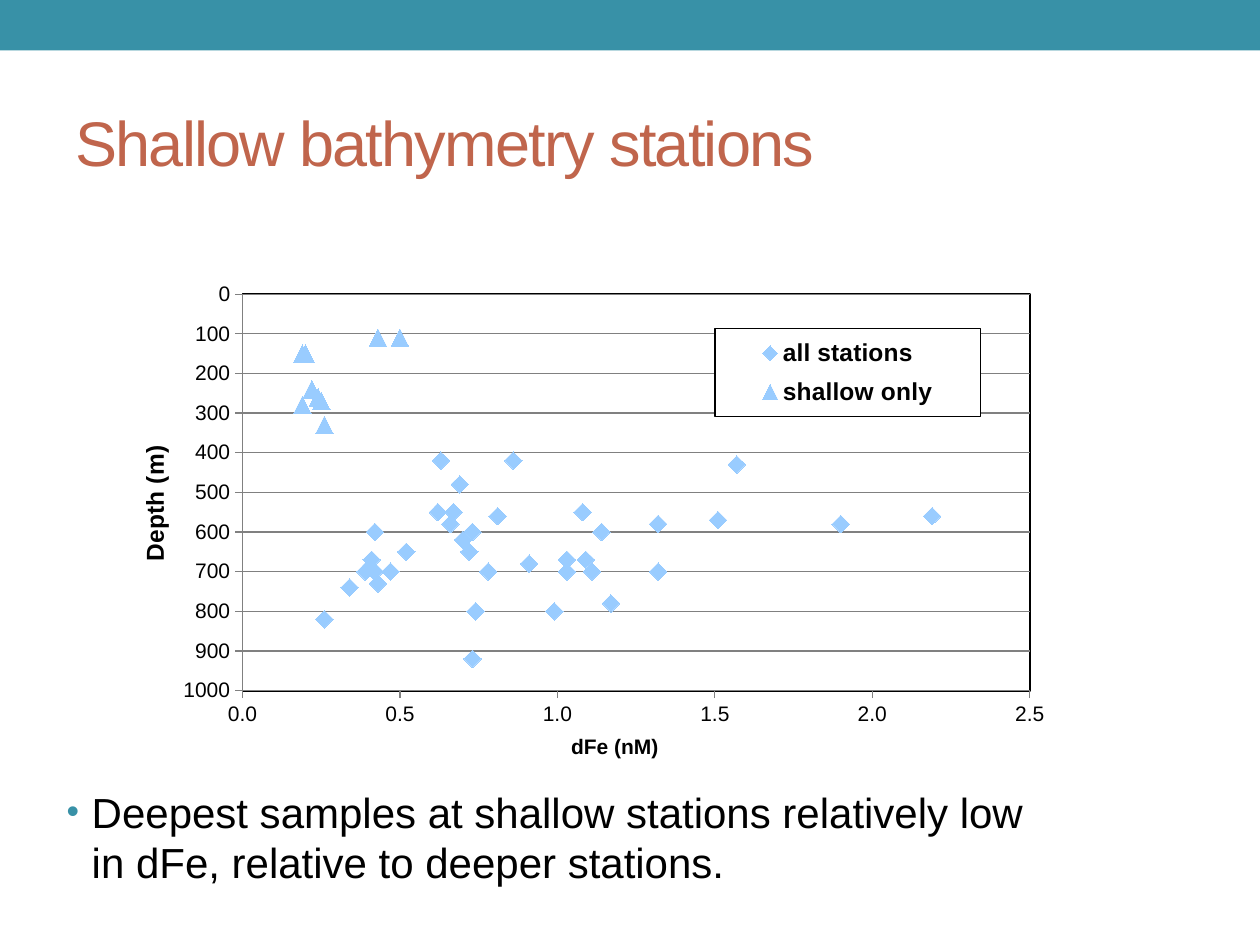
"""Build a slide with a scatter chart of dissolved iron against depth."""
from lxml import etree
from pptx import Presentation
from pptx.chart.data import XyChartData
from pptx.dml.color import RGBColor
from pptx.enum.chart import (XL_AXIS_CROSSES, XL_CHART_TYPE, XL_LEGEND_POSITION,
                             XL_MARKER_STYLE, XL_TICK_MARK)
from pptx.enum.shapes import MSO_SHAPE
from pptx.enum.text import MSO_ANCHOR
from pptx.oxml.ns import qn
from pptx.util import Inches, Pt

SCATTER = XL_CHART_TYPE.XY_SCATTER
DIAMOND, TRIANGLE = XL_MARKER_STYLE.DIAMOND, XL_MARKER_STYLE.TRIANGLE
OUTSIDE, NO_TICK = XL_TICK_MARK.OUTSIDE, XL_TICK_MARK.NONE
AT_MAXIMUM = XL_AXIS_CROSSES.MAXIMUM
LEGEND_RIGHT = XL_LEGEND_POSITION.RIGHT
RECTANGLE = MSO_SHAPE.RECTANGLE
MIDDLE = MSO_ANCHOR.MIDDLE

TEAL = RGBColor(0x38, 0x91, 0xA7)
RUST = RGBColor(0xC0, 0x65, 0x4C)
SKY = RGBColor(0x99, 0xCC, 0xFF)
GREY = RGBColor(0x80, 0x80, 0x80)
BLACK = RGBColor(0, 0, 0)
WHITE = RGBColor(0xFF, 0xFF, 0xFF)
FONT = "Arial"

TITLE = "Shallow bathymetry stations"
MESSAGE = ("Deepest samples at shallow stations relatively low in dFe, "
           "relative to deeper stations.")
SERIES = [
    ("all stations", DIAMOND, [
        (0.62, 550), (0.69, 480), (1.08, 550), (0.39, 700), (1.09, 670), (0.86, 420),
        (1.11, 700), (0.47, 700), (0.52, 650), (1.51, 570), (1.14, 600), (0.73, 600),
        (0.63, 420), (1.03, 700), (0.42, 700), (0.91, 680), (0.72, 650), (0.66, 580),
        (0.42, 600), (0.41, 670), (0.7, 620), (0.43, 730), (0.78, 700), (0.34, 740),
        (0.67, 550), (0.81, 560), (1.57, 430), (1.03, 670), (1.17, 780), (0.74, 800),
        (1.9, 580), (0.73, 920), (0.26, 820), (0.99, 800), (1.32, 700), (1.32, 580),
        (2.19, 560)]),
    ("shallow only", TRIANGLE, [
        (0.19, 150), (0.19, 280), (0.19, 280), (0.2, 150), (0.22, 240), (0.26, 330),
        (0.25, 270), (0.24, 260), (0.5, 110), (0.43, 110)]),
]
AXES = {
    "x": dict(title="dFe (nM)", size=12, maximum=2.5, step=0.5, form="0.0", place=(0.46, 0.93)),
    "y": dict(title="Depth (m)", size=14, maximum=1000, step=100, form="0", place=(0.02, 0.34)),
}
PLOT_PLACE = (0.13, 0.04, 0.8, 0.81)
LEGEND_PLACE = (0.61, 0.11, 0.27, 0.18)


def set_font(font, size, color, bold=False):
    font.name, font.size, font.bold = FONT, Pt(size), bold
    font.color.rgb = color


def add_text(page, area, text, size, color):
    box = page.shapes.add_textbox(*map(Inches, area))
    box.text_frame.word_wrap = True
    para = box.text_frame.paragraphs[0]
    para.text = text
    set_font(para.runs[0].font, size, color)
    return box.text_frame, para


def add_bullet(para, indent):
    props = para._p.get_or_add_pPr()
    props.set("marL", str(indent))
    props.set("indent", str(-indent))
    color = etree.SubElement(props, qn("a:buClr"))
    etree.SubElement(color, qn("a:srgbClr"), val=str(TEAL))
    etree.SubElement(props, qn("a:buSzPct"), val="85000")
    etree.SubElement(props, qn("a:buFont"), typeface=FONT)
    etree.SubElement(props, qn("a:buChar"), char="•")


def set_layout(element, place, inner=False):
    layout = element.find(qn("c:layout"))
    if layout is None:
        layout = etree.Element(qn("c:layout"))
        leading = [child for child in element if child.tag in (qn("c:tx"), qn("c:legendPos"))]
        element.insert(len(leading), layout)
    manual = etree.SubElement(layout, qn("c:manualLayout"))
    if inner:
        etree.SubElement(manual, qn("c:layoutTarget"), val="inner")
    for name in ("xMode", "yMode"):
        etree.SubElement(manual, qn(f"c:{name}"), val="edge")
    for name, share in zip("xywh", place):
        etree.SubElement(manual, qn(f"c:{name}"), val=str(share))


def outline(element, color, fill=None):
    props = etree.Element(qn("c:spPr"))
    if fill is None:
        etree.SubElement(props, qn("a:noFill"))
    else:
        solid = etree.SubElement(props, qn("a:solidFill"))
        etree.SubElement(solid, qn("a:srgbClr"), val=str(fill))
    line = etree.SubElement(props, qn("a:ln"), w=str(Pt(1)))
    solid = etree.SubElement(line, qn("a:solidFill"))
    etree.SubElement(solid, qn("a:srgbClr"), val=str(color))
    text = element.find(qn("c:txPr"))
    if text is None:
        element.append(props)
    else:
        text.addprevious(props)


def style_axis(axis, title, size, maximum, step, form, place):
    axis.minimum_scale, axis.maximum_scale, axis.major_unit = 0, maximum, step
    axis.major_tick_mark, axis.minor_tick_mark = OUTSIDE, NO_TICK
    axis.tick_labels.number_format = form
    axis.tick_labels.number_format_is_linked = False
    set_font(axis.tick_labels.font, 12, BLACK)
    axis.format.line.color.rgb = GREY
    axis.has_title = True
    para = axis.axis_title.text_frame.paragraphs[0]
    para.text = title
    set_font(para.runs[0].font, size, BLACK, True)
    set_layout(axis.axis_title._element, place)


def add_scatter(page, area):
    data = XyChartData()
    for name, _, points in SERIES:
        series = data.add_series(name)
        for iron, depth in points:
            series.add_data_point(iron, depth)
    chart = page.shapes.add_chart(SCATTER, *map(Inches, area), data).chart
    set_font(chart.font, 10, BLACK)
    chart.has_title = False
    chart.plots[0].vary_by_categories = False

    style_axis(chart.category_axis, **AXES["x"])
    style_axis(chart.value_axis, **AXES["y"])
    chart.category_axis.has_major_gridlines = False
    chart.value_axis.has_major_gridlines = True
    chart.value_axis.major_gridlines.format.line.color.rgb = GREY
    chart.value_axis.reverse_order = True
    chart.value_axis.crosses = AT_MAXIMUM

    for series, (_, symbol, _) in zip(chart.plots[0].series, SERIES):
        series.smooth = False
        series.format.line.fill.background()
        series.marker.style, series.marker.size = symbol, 10
        series.marker.format.fill.solid()
        series.marker.format.fill.fore_color.rgb = SKY
        series.marker.format.line.fill.background()

    chart.has_legend = True
    chart.legend.position = LEGEND_RIGHT
    chart.legend.include_in_layout = False
    set_font(chart.legend.font, 14, BLACK, True)
    set_layout(chart.legend._element, LEGEND_PLACE)
    outline(chart.legend._element, BLACK, WHITE)
    plot_area = chart._chartSpace.chart.plotArea
    set_layout(plot_area, PLOT_PLACE, inner=True)
    outline(plot_area, BLACK)


def main():
    deck = Presentation()
    deck.slide_width, deck.slide_height = Inches(10), Inches(7.5)
    page = deck.slides.add_slide(deck.slide_layouts[6])

    band = page.shapes.add_shape(RECTANGLE, 0, 0, deck.slide_width, Inches(0.4))
    band.shadow.inherit = False
    band.fill.solid()
    band.fill.fore_color.rgb = TEAL
    band.line.fill.background()

    _, message = add_text(page, (0.43, 6.19, 8.03, 1.02), MESSAGE, 24, BLACK)
    add_bullet(message, Inches(0.2))
    frame, title = add_text(page, (0.5, 0.58, 9, 1.08), TITLE, 36, RUST)
    frame.vertical_anchor = MIDDLE
    title.runs[0].font._element.set("spc", "-100")
    add_scatter(page, (0.91, 2.18, 7.81, 3.89))
    deck.save("out.pptx")


if __name__ == "__main__":
    main()
